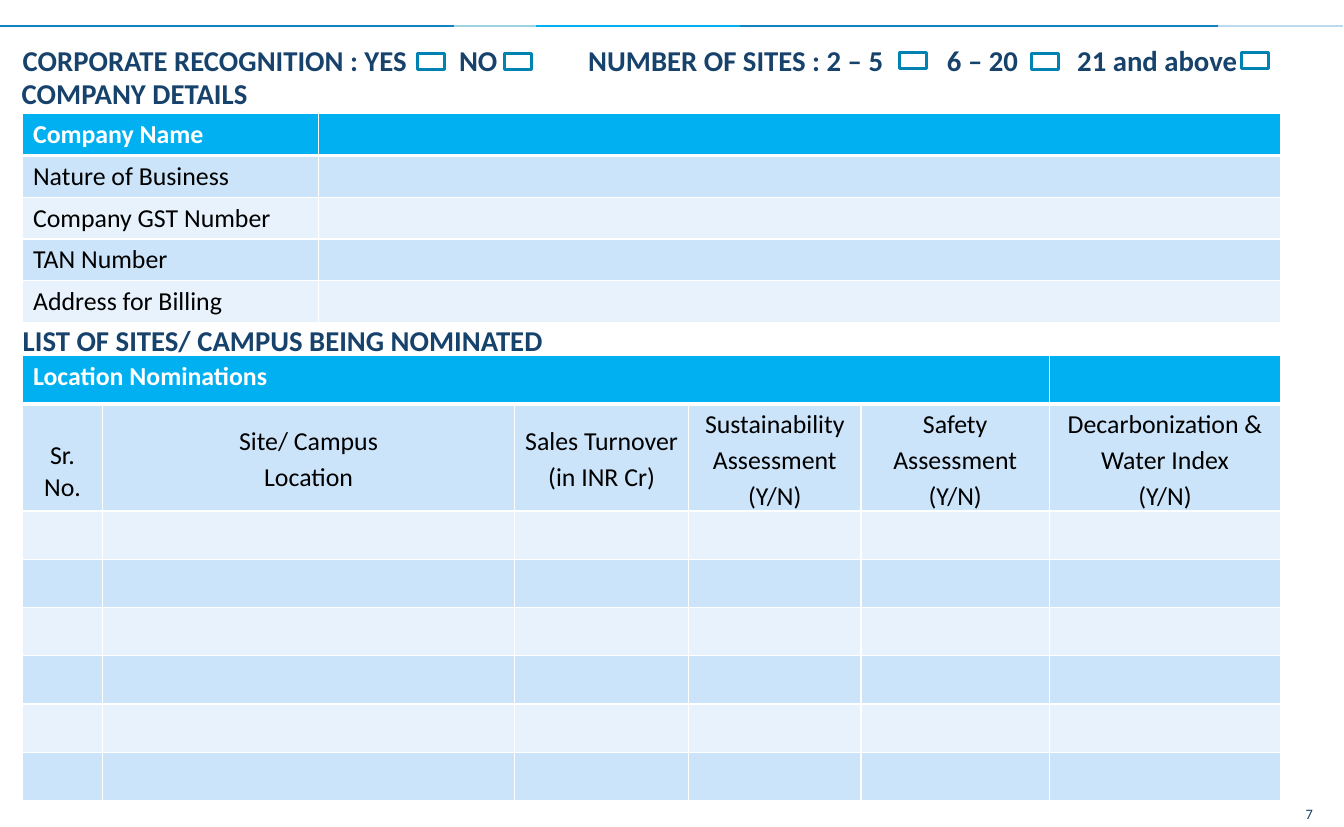
"""Build the corporate nomination form slide with its company and site tables."""
import pptx
import pptx.dml.color
import pptx.enum.shapes
import pptx.enum.text
import pptx.oxml.ns
import pptx.util
from lxml import etree

PX = 9144
FONT = "Calibri"
NAVY, SKY, WHITE, BLACK, TEAL = "17426B", "00B0F0", "FFFFFF", "000000", "0082B2"
BANDS = ("E7F2FC", "CCE4F9")
LEFT, TABLE_WIDTH = 22, 1217

RULE_Y = 25
RULE_PARTS = [
    (1171, 1299, "BCD9EE"),
    (692, 1178, "1582C5"),
    (0, 442, "1582C5"),
    (510, 716, "00B0F0"),
    (439, 518, "9FD3E1"),
]

CHOICES = ["CORPORATE RECOGNITION : YES", "NO", "NUMBER OF SITES : 2 – 5", "6 – 20", "21 and above"]
CHOICE_TABS = [422, 547, 894, 1020]
CHECKBOXES = [(404, 52), (488, 52), (870, 51), (998, 52), (1201, 51)]
CHECKBOX_SIZE = (26, 15)

HEADINGS = [
    ("\t".join(CHOICES), LEFT, 41, 1240, 37, CHOICE_TABS),
    ("LIST OF SITES/ CAMPUS BEING NOMINATED", LEFT, 312, TABLE_WIDTH, 22, []),
    ("COMPANY DETAILS", 21, 73, 1240, 37, []),
]

COMPANY_FIELDS = ["Company Name", "Nature of Business", "Company GST Number", "TAN Number", "Address for Billing"]
COMPANY_TOP, COMPANY_HEIGHT = 110, 202
COMPANY_COLUMNS = [286, 931]

SITE_TITLE = "Location Nominations"
SITE_LABELS = [
    "Sr. No.",
    "Site/ Campus\nLocation",
    "Sales Turnover\n(in INR Cr)",
    "Sustainability Assessment\n(Y/N)",
    "Safety Assessment\n(Y/N)",
    "Decarbonization &\nWater Index\n(Y/N)",
]
SITE_TOP, SITE_HEIGHT, SITE_LABEL_HEIGHT, SITE_BLANK_ROWS = 344, 430, 103, 6
SITE_COLUMNS = [77, 399, 168, 167, 182, 224]
PAGE_NUMBER = "7"

ALIGN = pptx.enum.text.PP_ALIGN
ANCHOR = pptx.enum.text.MSO_ANCHOR


def px(length):
    return pptx.util.Emu(round(length * PX))


def rgb(value):
    return pptx.dml.color.RGBColor.from_string(value)


def write(frame, text, size=18, color=BLACK, bold=False, align=ALIGN.LEFT, spacing=None, tabs=()):
    for index, line in enumerate(text.split("\n")):
        paragraph = frame.add_paragraph() if index else frame.paragraphs[0]
        if tabs:
            props = paragraph._p.get_or_add_pPr()
            stops = etree.SubElement(props, pptx.oxml.ns.qn("a:tabLst"))
            for tab in tabs:
                etree.SubElement(stops, pptx.oxml.ns.qn("a:tab"), pos=str(px(tab)), algn="l")
        paragraph.alignment = align
        if spacing:
            paragraph.line_spacing = spacing
        run = paragraph.add_run()
        run.text = line
        run.font.name, run.font.size, run.font.bold = FONT, pptx.util.Pt(size), bold
        run.font.color.rgb = rgb(color)


def add_label(slide, text, left, top, width, height, anchor=ANCHOR.TOP, **style):
    frame = slide.shapes.add_textbox(px(left), px(top), px(width), px(height)).text_frame
    frame.margin_left = frame.margin_top = frame.margin_right = frame.margin_bottom = 0
    frame.word_wrap = True
    frame.vertical_anchor = anchor
    write(frame, text, **style)


def add_rule_part(slide, start, end, color):
    part = slide.shapes.add_connector(
        pptx.enum.shapes.MSO_CONNECTOR.STRAIGHT, px(start), px(RULE_Y), px(end), px(RULE_Y))
    part.line.color.rgb = rgb(color)
    part.line.width = pptx.util.Pt(1.5)
    etree.SubElement(part._element.spPr, pptx.oxml.ns.qn("a:effectLst"))


def add_checkbox(slide, left, top):
    box = slide.shapes.add_shape(
        pptx.enum.shapes.MSO_SHAPE.RECTANGLE, px(left), px(top), *map(px, CHECKBOX_SIZE))
    box.shadow.inherit = False
    box.fill.background()
    box.line.color.rgb = rgb(TEAL)
    box.line.width = pptx.util.Pt(2)


def set_borders(cell, widths):
    props = cell._tc.get_or_add_tcPr()
    for side, width in widths.items():
        edge = etree.SubElement(props, pptx.oxml.ns.qn(f"a:ln{side}"), w=str(pptx.util.Pt(width)))
        fill = etree.SubElement(edge, pptx.oxml.ns.qn("a:solidFill"))
        etree.SubElement(fill, pptx.oxml.ns.qn("a:srgbClr"), val=WHITE)


def add_grid(slide, top, columns, heights):
    grid = slide.shapes.add_table(
        len(heights), len(columns), px(LEFT), px(top), px(TABLE_WIDTH), px(sum(heights))).table
    grid.horz_banding = False
    for column, width in zip(grid.columns, columns):
        column.width = px(width)
    for index, (row, height) in enumerate(zip(grid.rows, heights)):
        row.height = px(height)
        for cell in row.cells:
            set_borders(cell, {"L": 1, "R": 1, "T": 3 if index == 1 else 1, "B": 1 if index else 3})
            cell.fill.solid()
            cell.fill.fore_color.rgb = rgb(BANDS[index % 2] if index else SKY)
    return grid


def add_company_table(slide):
    count = len(COMPANY_FIELDS)
    grid = add_grid(slide, COMPANY_TOP, COMPANY_COLUMNS, [COMPANY_HEIGHT / count] * count)
    for index, field in enumerate(COMPANY_FIELDS):
        write(grid.cell(index, 0).text_frame, field, color=BLACK if index else WHITE, bold=index == 0)


def add_site_table(slide):
    plain = (SITE_HEIGHT - SITE_LABEL_HEIGHT) / (SITE_BLANK_ROWS + 1)
    heights = [plain, SITE_LABEL_HEIGHT] + [plain] * SITE_BLANK_ROWS
    grid = add_grid(slide, SITE_TOP, SITE_COLUMNS, heights)
    grid.cell(0, 0).merge(grid.cell(0, len(SITE_COLUMNS) - 2))
    write(grid.cell(0, 0).text_frame, SITE_TITLE, color=WHITE, bold=True)
    for index, label in enumerate(SITE_LABELS):
        cell = grid.cell(1, index)
        if index:
            cell.vertical_anchor = ANCHOR.MIDDLE
            cell.margin_left = cell.margin_right = px(7)
            cell.margin_top = cell.margin_bottom = 0
        else:
            cell.margin_top = px(35)
        write(cell.text_frame, label, align=ALIGN.CENTER, spacing=1.15 if index else None)


def main():
    deck = pptx.Presentation()
    deck.slide_width, deck.slide_height = px(1300), px(800)
    slide = deck.slides.add_slide(deck.slide_layouts[6])
    for part in RULE_PARTS:
        add_rule_part(slide, *part)
    add_label(slide, PAGE_NUMBER, 1254, 779, 16, 17, anchor=ANCHOR.MIDDLE,
              size=10, color=NAVY, align=ALIGN.RIGHT)
    add_company_table(slide)
    add_site_table(slide)
    for text, left, top, width, height, tabs in HEADINGS:
        add_label(slide, text, left, top, width, height, size=20, color=NAVY, bold=True, tabs=tabs)
    for left, top in CHECKBOXES:
        add_checkbox(slide, left, top)
    deck.save("out.pptx")


if __name__ == "__main__":
    main()
